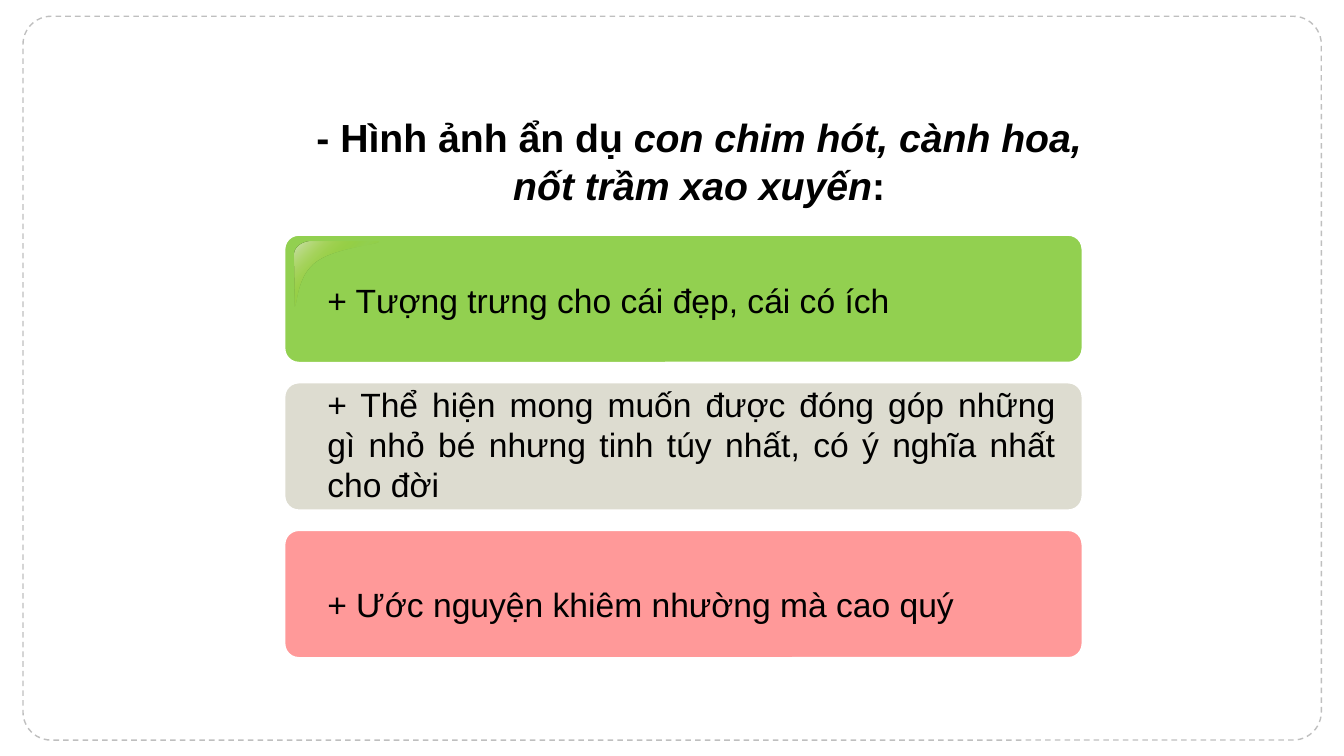
from dataclasses import dataclass

from lxml import etree
from pptx import Presentation
from pptx import util as u
from pptx.dml.color import RGBColor
from pptx.enum import dml, shapes, text
from pptx.oxml.ns import qn


@dataclass(frozen=True)
class Theme:
    font: str = "Arial"
    title_size: int = 28
    body_size: int = 24
    ink: str = "000000"
    frame: str = "BFBFBF"
    edge: str = "FFFFFF"
    beauty: str = "92D050"
    devotion: str = "DDDCD0"
    humility: str = "FF9999"
    shine_ends: str = "CEE2B5"
    shine_middle: str = "94C600"


THEME = Theme()
TITLE_RUNS = [
    ("- Hình ảnh ẩn dụ ", False),
    ("con chim hót, cành hoa, nốt trầm xao xuyến", True),
    (":", False),
]
MEANINGS = [
    ("+ Tượng trưng cho cái đẹp, cái có ích",
     THEME.beauty, 1.05, 15.7, 1.27, text.PP_ALIGN.LEFT),
    ("+ Thể hiện mong muốn được đóng góp những gì nhỏ bé nhưng tinh túy nhất, "
     "có ý nghĩa nhất cho đời",
     THEME.devotion, -0.07, 18.85, 3.33, text.PP_ALIGN.JUSTIFY),
    ("+ Ước nguyện khiêm nhường mà cao quý",
     THEME.humility, 1.25, 18.85, 1.27, text.PP_ALIGN.LEFT),
]
CARD_PITCH = 3.72


def style_run(run, size, bold=False, italic=False):
    run.font.name = THEME.font
    run.font.size = u.Pt(size)
    run.font.bold = bold
    run.font.italic = italic
    run.font.color.rgb = RGBColor.from_string(THEME.ink)


def rounded_box(slide, box, corner, line_color, line_width):
    panel = slide.shapes.add_shape(
        shapes.MSO_SHAPE.ROUNDED_RECTANGLE, *map(u.Cm, box))
    panel.adjustments[0] = corner
    panel.shadow.inherit = False
    panel.line.color.rgb = RGBColor.from_string(line_color)
    panel.line.width = u.Pt(line_width)
    return panel


def add_frame(slide, box):
    frame = rounded_box(slide, box, 0.039, THEME.frame, 1)
    frame.fill.background()
    frame.line.dash_style = dml.MSO_LINE.DASH


def add_title(slide, box):
    title = slide.shapes.title
    title.left, title.top, title.width, title.height = map(u.Cm, box)
    frame = title.text_frame
    frame.word_wrap = True
    frame.auto_size = text.MSO_AUTO_SIZE.NONE
    frame.vertical_anchor = text.MSO_ANCHOR.TOP
    paragraph = frame.paragraphs[0]
    paragraph.alignment = text.PP_ALIGN.CENTER
    paragraph.line_spacing = 1.0
    for words, italic in TITLE_RUNS:
        run = paragraph.add_run()
        run.text = words
        style_run(run, THEME.title_size, True, italic)


def bezier(p0, p1, p2, p3, steps=16):
    for step in range(1, steps + 1):
        t = step / steps
        s = 1 - t
        yield tuple(s**3 * a + 3 * s * s * t * b + 3 * s * t * t * c + t**3 * d
                    for a, b, c, d in zip(p0, p1, p2, p3))


def shine_gradient():
    gradient = etree.Element(qn("a:gradFill"), rotWithShape="1")
    stops = etree.SubElement(gradient, qn("a:gsLst"))
    for position, color in ((0, THEME.shine_ends), (50, THEME.shine_middle),
                            (100, THEME.shine_ends)):
        stop = etree.SubElement(stops, qn("a:gs"), pos=str(position * 1000))
        tint = etree.SubElement(stop, qn("a:srgbClr"), val=color)
        if position == 50:
            etree.SubElement(tint, qn("a:alpha"), val="0")
    etree.SubElement(gradient, qn("a:lin"), ang="2700000", scaled="1")
    return gradient


def add_shine(slide, box):
    left, top = box[:2]
    outline = [
        *bezier((0.71, 0.2), (0.46, 0.2), (0.28, 0.36), (0.28, 0.53)),
        *bezier((0.28, 1.83), (0.38, 1.85), (0.3, 1.07), (0.86, 0.69)),
        *bezier((0.86, 0.69), (1.4, 0.33), (2.44, 0.3), (2.41, 0.2)),
    ]
    builder = slide.shapes.build_freeform(
        u.Cm(left + 0.71), u.Cm(top + 0.2), scale=1.0)
    builder.add_line_segments(
        [(u.Cm(left + x), u.Cm(top + y)) for x, y in outline], close=True)
    shine = builder.convert_to_shape()
    shine.shadow.inherit = False
    shine.line.fill.background()
    shine.fill.background()
    properties = shine.element.spPr
    properties.replace(properties.find(qn("a:noFill")), shine_gradient())


def add_meaning(slide, box, words, color, offset, width, height, alignment):
    left, top = box[:2]
    card = rounded_box(slide, box, 0.119, THEME.edge, 3)
    card.fill.solid()
    card.fill.fore_color.rgb = RGBColor.from_string(color)
    if color == THEME.beauty:
        add_shine(slide, box)
    meaning = slide.shapes.add_textbox(
        *map(u.Cm, (left + 0.86, top + offset, width, height)))
    meaning.text_frame.word_wrap = True
    paragraph = meaning.text_frame.paragraphs[0]
    paragraph.text = words
    paragraph.alignment = alignment
    style_run(paragraph.runs[0], THEME.body_size)


def add_meanings(slide, box):
    left, top, width, height = box
    for index, meaning in enumerate(MEANINGS):
        add_meaning(slide, (left, top + index * CARD_PITCH, width, height), *meaning)


def main():
    deck = Presentation()
    deck.slide_width, deck.slide_height = u.Cm(33.87), u.Cm(19.05)
    slide = deck.slides.add_slide(deck.slide_layouts[5])
    add_frame(slide, (0.58, 0.41, 32.72, 18.24))
    add_title(slide, (7.14, 2.74, 20.96, 2.64))
    add_meanings(slide, (7.14, 5.89, 20.17, 3.28))
    deck.save("out.pptx")


if __name__ == "__main__":
    main()
